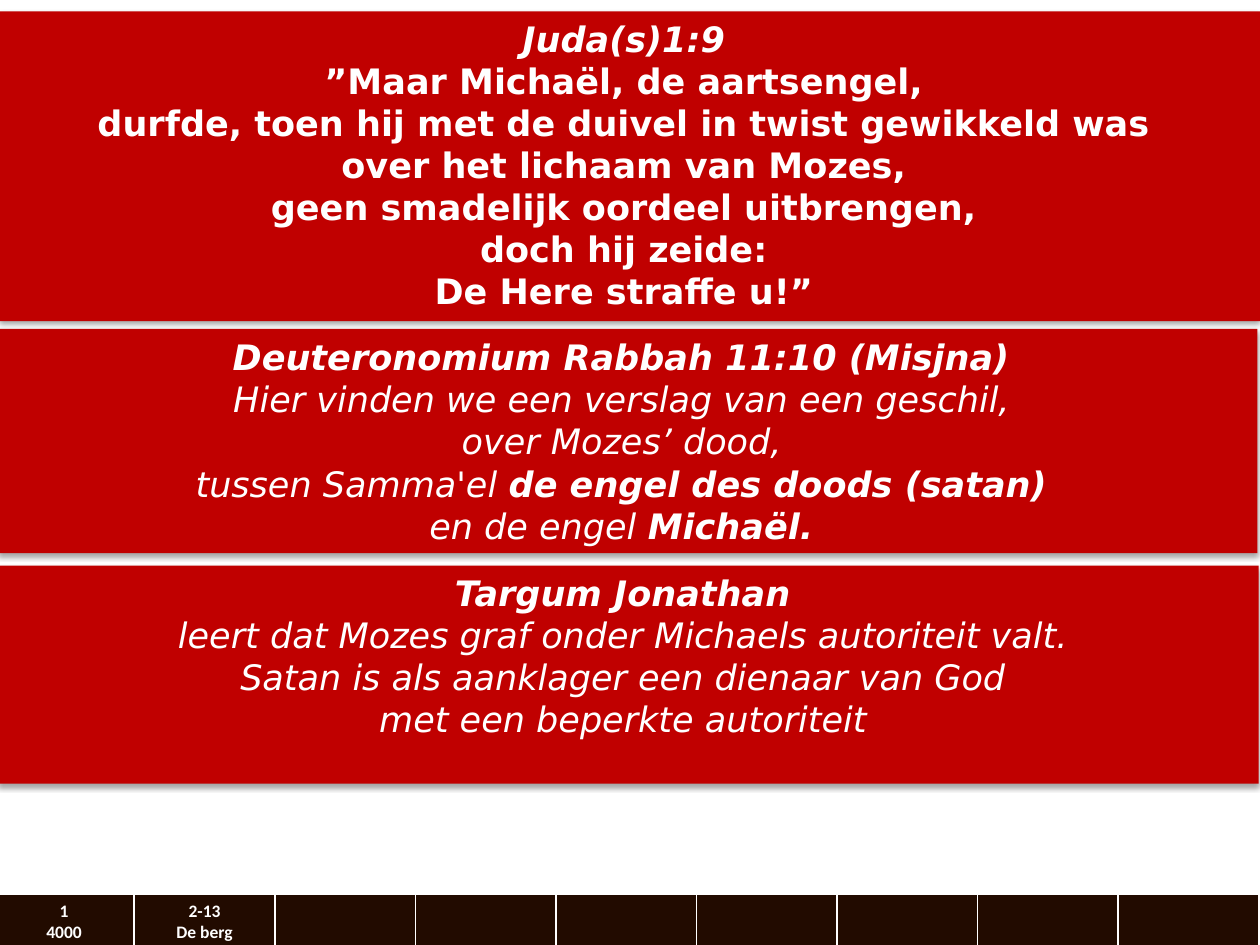
from lxml.etree import SubElement
from pptx import Presentation
from pptx.dml.color import RGBColor
from pptx.enum.shapes import MSO_SHAPE
from pptx.enum.text import MSO_ANCHOR, MSO_AUTO_SIZE, PP_ALIGN
from pptx.oxml import parse_xml
from pptx.oxml.ns import nsdecls, qn
from pptx.util import Inches, Pt

RED, DARK, WHITE = "C00000", "220B00", "FFFFFF"
WIDE, HIGH = 10, 7.5

# Each line is a list of (text, style); b is bold, i is italic
PANELS = [
    (0, 0.09, 2.46, MSO_ANCHOR.TOP, [
        [("Juda(s)1:9 ", "bi")],
        [("”Maar Michaël, de aartsengel, ", "b")],
        [("durfde, toen hij met de duivel in twist gewikkeld was ", "b")],
        [("over het lichaam van Mozes, ", "b")],
        [("geen smadelijk oordeel uitbrengen, ", "b")],
        [("doch hij zeide: ", "b")],
        [("De Here straffe u!” ", "b")],
    ]),
    (-0.02, 2.61, 1.78, MSO_ANCHOR.MIDDLE, [
        [("Deuteronomium Rabbah 11:10 (Misjna) ", "bi")],
        [("Hier vinden we een verslag van een geschil, ", "i")],
        [("over Mozes’ dood, ", "i")],
        [("tussen Samma'el ", "i"), ("de engel des doods (satan) ", "bi")],
        [("en de engel ", "i"), ("Michaël. ", "bi")],
    ]),
    (-0.01, 4.49, 1.73, MSO_ANCHOR.TOP, [
        [("Targum Jonathan ", "bi")],
        [("leert dat Mozes graf onder Michaels autoriteit valt. ", "i")],
        [("Satan is als aanklager een dienaar van God ", "i")],
        [("met een beperkte autoriteit ", "i")],
    ]),
]
CELLS = ["1\n4000", "2-13\nDe berg"] + [""] * 7
BORDERS = {"lnL": 1, "lnR": 1, "lnT": 1, "lnB": 3}


def color(code):
    return RGBColor.from_string(code)


def style(para, name, size):
    para.alignment = PP_ALIGN.CENTER
    para.font.name = name
    para.font.size = Pt(size)
    para.font.color.rgb = color(WHITE)


def add_shadow(shape):
    shape.shadow.inherit = False
    effects = shape._element.spPr.find(qn("a:effectLst"))
    effects.append(parse_xml(
        f'<a:outerShdw {nsdecls("a")} blurRad="{Pt(3.1)}" dist="{Pt(1.8)}"'
        ' dir="5400000" rotWithShape="0"><a:srgbClr val="000000">'
        '<a:alpha val="35000"/></a:srgbClr></a:outerShdw>'))


def add_panel(slide, left, top, height, anchor, lines):
    shape = slide.shapes.add_shape(
        MSO_SHAPE.RECTANGLE, Inches(left), Inches(top),
        Inches(WIDE), Inches(height))
    shape.fill.solid()
    shape.fill.fore_color.rgb = color(RED)
    shape.line.fill.background()
    add_shadow(shape)
    frame = shape.text_frame
    frame.word_wrap = True
    frame.auto_size = MSO_AUTO_SIZE.SHAPE_TO_FIT_TEXT
    frame.vertical_anchor = anchor
    for row, line in enumerate(lines):
        para = frame.add_paragraph() if row else frame.paragraphs[0]
        style(para, "DejaVu Sans", 20)
        for text, marks in line:
            run = para.add_run()
            run.text = text
            run.font.bold = "b" in marks
            run.font.italic = "i" in marks


def add_borders(cell):
    props = cell._tc.get_or_add_tcPr()
    for spot, (tag, width) in enumerate(BORDERS.items()):
        line = SubElement(props, qn(f"a:{tag}"), w=str(Pt(width)))
        fill = SubElement(line, qn("a:solidFill"))
        SubElement(fill, qn("a:srgbClr"), val=WHITE)
        props.insert(spot, line)


def add_strip(slide):
    table = slide.shapes.add_table(
        1, len(CELLS), Inches(-0.05), Inches(7.1),
        Inches(10.04), Inches(0.43)).table
    for cell, text in zip(table.rows[0].cells, CELLS):
        cell.text = text
        cell.fill.solid()
        cell.fill.fore_color.rgb = color(DARK)
        add_borders(cell)
        for para in cell.text_frame.paragraphs:
            style(para, "Calibri", 10)
            para.font.bold = True


def main():
    deck = Presentation()
    deck.slide_width, deck.slide_height = Inches(WIDE), Inches(HIGH)
    slide = deck.slides.add_slide(deck.slide_layouts[6])
    slide.background.fill.solid()
    slide.background.fill.fore_color.rgb = color(WHITE)
    # Timeline strip at the foot, then the three quotes
    add_strip(slide)
    for panel in PANELS:
        add_panel(slide, *panel)
    deck.save("out.pptx")


if __name__ == "__main__":
    main()
